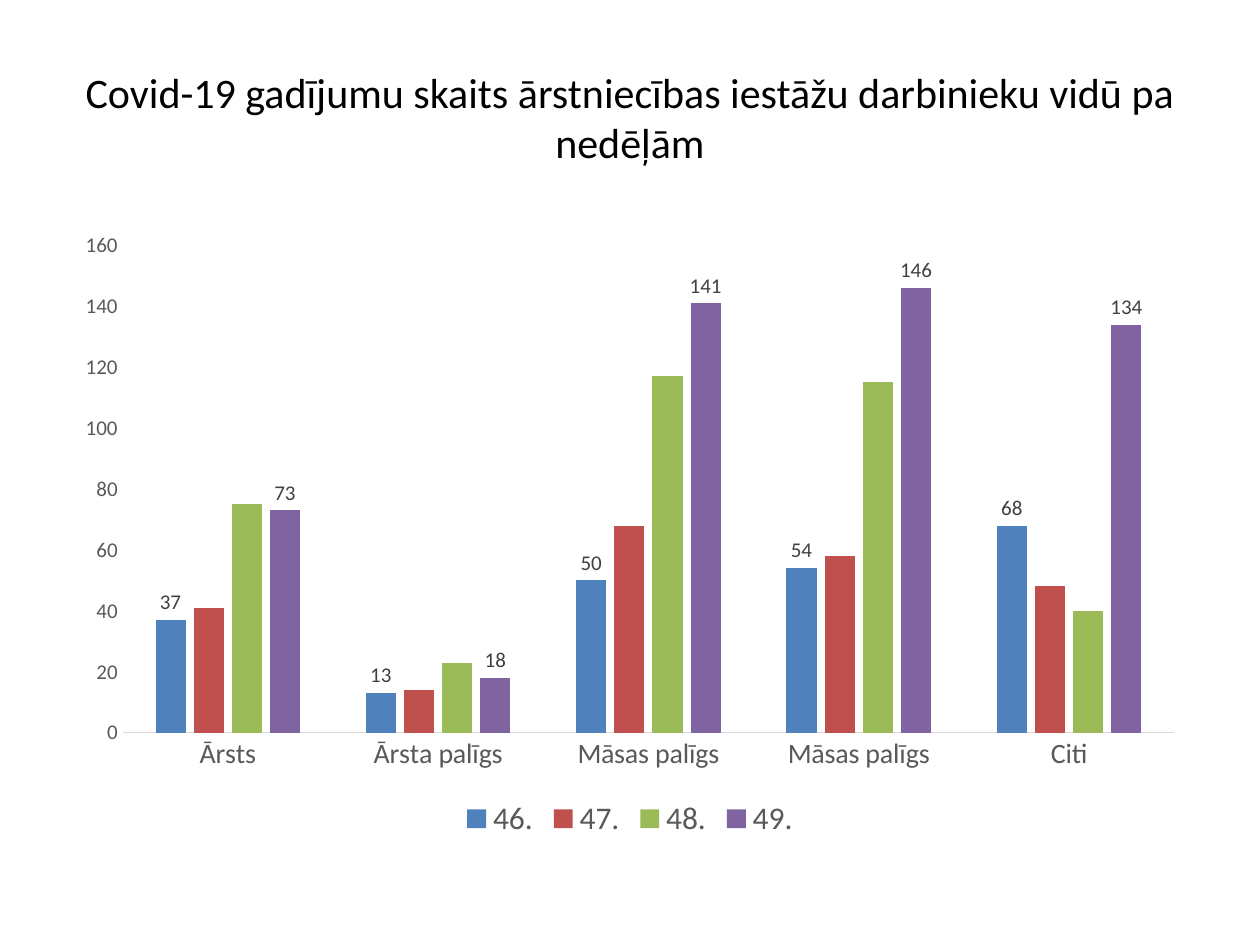
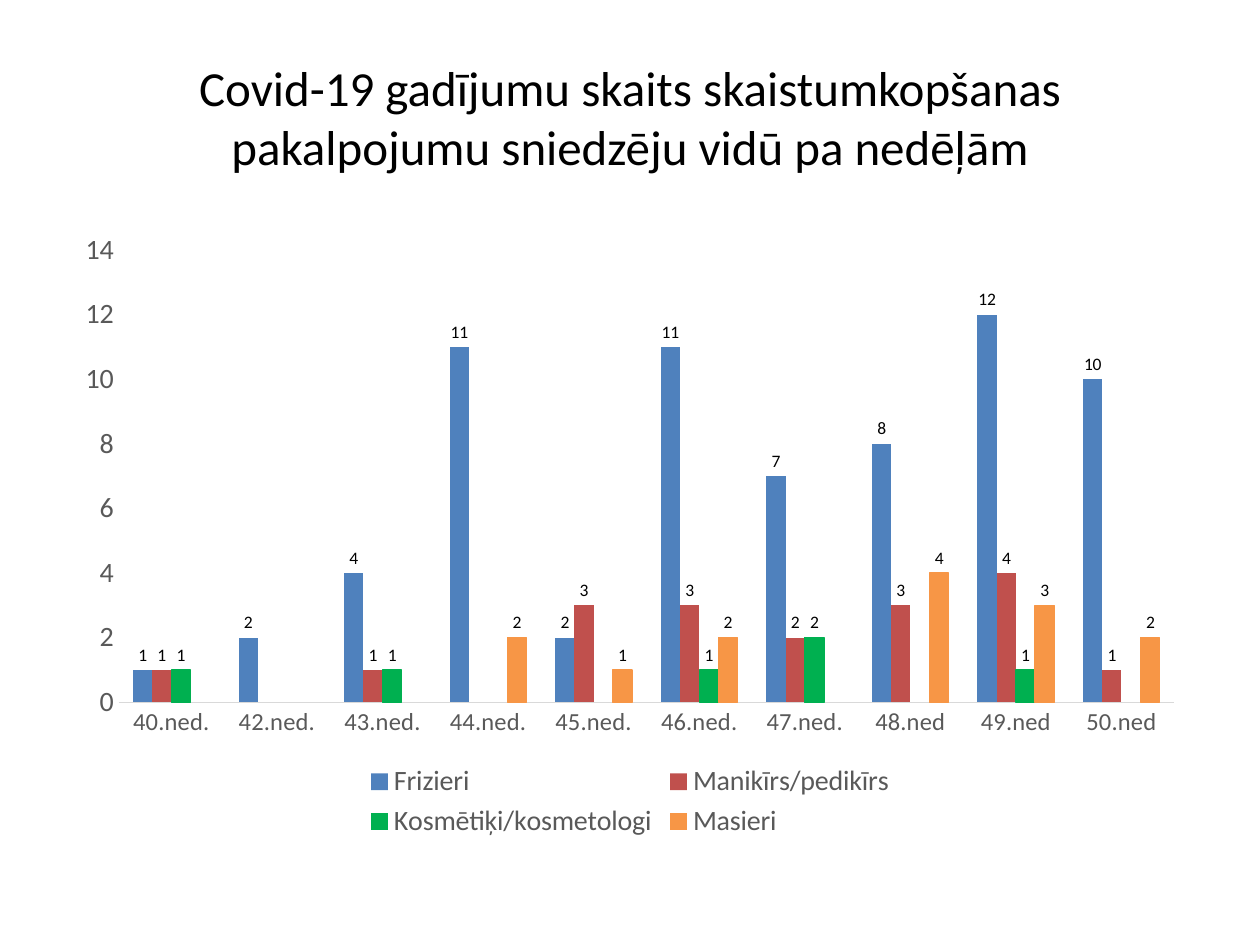
"""Build two slides of clustered column charts on weekly Covid-19 cases."""
from pptx import Presentation
from pptx.chart.data import CategoryChartData
from pptx.dml.color import RGBColor
from pptx.enum.chart import (XL_CHART_TYPE, XL_LABEL_POSITION,
                             XL_LEGEND_POSITION, XL_TICK_MARK)
from pptx.enum.text import MSO_ANCHOR, PP_ALIGN
from pptx.util import Pt

COLUMNS = XL_CHART_TYPE.COLUMN_CLUSTERED
LABEL_ABOVE = XL_LABEL_POSITION.OUTSIDE_END
LEGEND_BELOW = XL_LEGEND_POSITION.BOTTOM
NO_TICK = XL_TICK_MARK.NONE
MIDDLE = MSO_ANCHOR.MIDDLE
CENTER = PP_ALIGN.CENTER

PX = 9144
SLIDE_SIZE = (1000, 750)
TITLE_AREA = (50, 30, 900, 125)
CHART_AREA = (50, 175, 900, 495)
FONT = "Calibri"
BLACK, GRAY, DARK_GRAY, AXIS_LINE = "000000", "595959", "404040", "D9D9D9"
BLUE, RED, LIME, PURPLE = "4F81BD", "C0504D", "9BBB59", "8064A2"
GREEN, ORANGE = "00B050", "F79646"

SLIDES = [
    {
        "title": "Covid-19 gadījumu skaits ārstniecības iestāžu darbinieku vidū pa nedēļām",
        "title_size": 24,
        "categories": ["Ārsts", "Ārsta palīgs", "Māsas palīgs", "Māsas palīgs", "Citi"],
        "series": [
            ("46.", BLUE, [37, 13, 50, 54, 68]),
            ("47.", RED, [41, 14, 68, 58, 48]),
            ("48.", LIME, [75, 23, 117, 115, 40]),
            ("49.", PURPLE, [73, 18, 141, 146, 134]),
        ],
        "labelled": ["46.", "49."],
        "outlined": [],
        "label_style": (12, DARK_GRAY),
        "category_size": 16, "value_size": 12, "legend_size": 18,
        "maximum": 160, "step": 20, "gap": 219, "overlap": -27,
    },
    {
        "title": "Covid-19 gadījumu skaits skaistumkopšanas pakalpojumu sniedzēju vidū pa nedēļām",
        "title_size": 28,
        "categories": ["40.ned.", "42.ned.", "43.ned.", "44.ned.", "45.ned.",
                       "46.ned.", "47.ned.", "48.ned", "49.ned", "50.ned"],
        "series": [
            ("Frizieri", BLUE, [1, 2, 4, 11, 2, 11, 7, 8, 12, 10]),
            ("Manikīrs/pedikīrs", RED, [1, None, 1, None, 3, 3, 2, 3, 4, 1]),
            ("Kosmētiķi/kosmetologi", GREEN,
             [1, None, 1, None, None, 1, 2, None, 1, None]),
            ("Masieri", ORANGE, [None, None, None, 2, 1, 2, None, 4, 3, 2]),
        ],
        "labelled": ["Frizieri", "Manikīrs/pedikīrs", "Kosmētiķi/kosmetologi", "Masieri"],
        "outlined": ["Kosmētiķi/kosmetologi", "Masieri"],
        "label_style": (10, BLACK),
        "category_size": 14, "value_size": 16, "legend_size": 16,
        "maximum": 14, "step": 2, "gap": 150, "overlap": 0,
    },
]


def rgb(code):
    return RGBColor.from_string(code)


def emu(area):
    return [length * PX for length in area]


def set_font(font, size, color):
    font.name, font.size, font.bold = FONT, Pt(size), False
    font.color.rgb = rgb(color)


def set_line(line, color):
    line.color.rgb = rgb(color)
    line.width = Pt(0.75)


def add_title(page, content):
    frame = page.shapes.add_textbox(*emu(TITLE_AREA)).text_frame
    frame.word_wrap = True
    frame.vertical_anchor = MIDDLE
    para = frame.paragraphs[0]
    para.text = content["title"]
    para.alignment = CENTER
    set_font(para.font, content["title_size"], BLACK)


def style_axes(chart, content):
    for axis, size in ((chart.category_axis, content["category_size"]),
                       (chart.value_axis, content["value_size"])):
        axis.major_tick_mark = axis.minor_tick_mark = NO_TICK
        axis.has_major_gridlines = False
        set_font(axis.tick_labels.font, size, GRAY)
    set_line(chart.category_axis.format.line, AXIS_LINE)
    values = chart.value_axis
    values.format.line.fill.background()
    values.minimum_scale, values.maximum_scale = 0, content["maximum"]
    values.major_unit = content["step"]


def style_series(plot, content):
    plot.gap_width, plot.overlap = content["gap"], content["overlap"]
    plot.vary_by_categories = False
    for series, (name, color, _) in zip(plot.series, content["series"]):
        series.format.fill.solid()
        series.format.fill.fore_color.rgb = rgb(color)
        series.invert_if_negative = False
        if name in content["outlined"]:
            set_line(series.format.line, color)
        if name in content["labelled"]:
            labels = series.data_labels
            labels.show_value = True
            labels.position = LABEL_ABOVE
            set_font(labels.font, *content["label_style"])


def add_chart(page, content):
    data = CategoryChartData()
    data.categories = content["categories"]
    for name, _, values in content["series"]:
        data.add_series(name, values)
    chart = page.shapes.add_chart(COLUMNS, *emu(CHART_AREA), data).chart
    set_font(chart.font, 10, BLACK)
    chart.has_title = False
    chart.has_legend = True
    chart.legend.position = LEGEND_BELOW
    chart.legend.include_in_layout = False
    set_font(chart.legend.font, content["legend_size"], GRAY)
    style_axes(chart, content)
    style_series(chart.plots[0], content)


def main():
    deck = Presentation()
    deck.slide_width, deck.slide_height = emu(SLIDE_SIZE)
    for content in SLIDES:
        page = deck.slides.add_slide(deck.slide_layouts[6])
        add_title(page, content)
        add_chart(page, content)
    deck.save("out.pptx")


if __name__ == "__main__":
    main()
